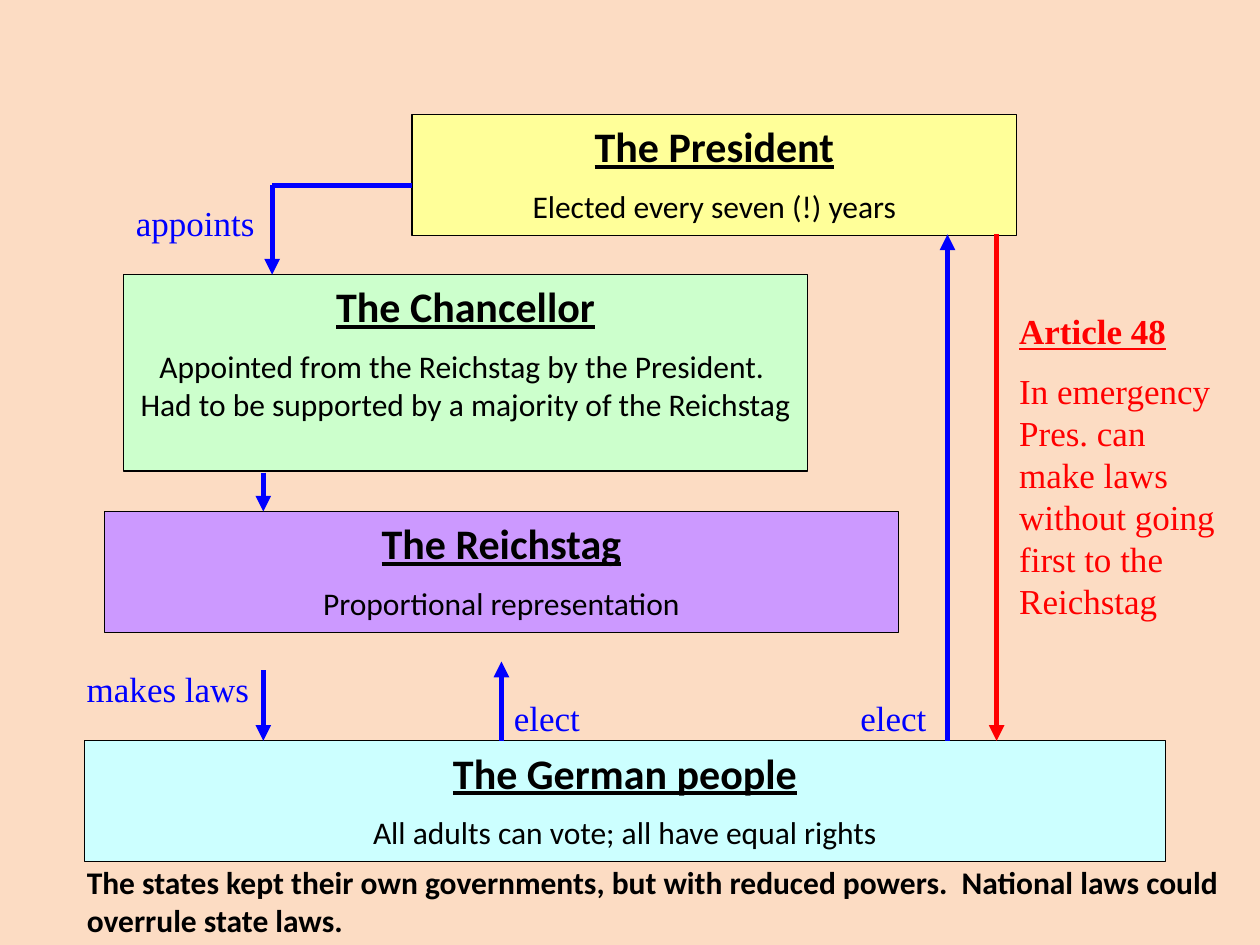
from lxml import etree
from pptx import Presentation
from pptx.dml.color import RGBColor
from pptx.enum.shapes import MSO_CONNECTOR, MSO_SHAPE
from pptx.enum.text import MSO_ANCHOR, PP_ALIGN
from pptx.oxml.ns import qn
from pptx.util import Inches, Pt

BLACK, BLUE, RED = "000000", "0000FF", "FF0000"
SANS, SERIF = "Calibri", "Times New Roman"


def color(hex_string):
    return RGBColor.from_string(hex_string)


def write(shape, lines, align=PP_ALIGN.LEFT):
    """Fill a shape with lines of (text, font name, size, colour, bold, underline)."""
    frame = shape.text_frame
    frame.word_wrap = True
    frame.vertical_anchor = MSO_ANCHOR.TOP
    for index, (text, name, size, font_color, bold, underline) in enumerate(lines):
        paragraph = frame.add_paragraph() if index else frame.paragraphs[0]
        paragraph.text = text
        paragraph.alignment = align
        paragraph.space_before = Pt(size / 2 if index else 0)
        font = paragraph.font
        font.name, font.size = name, Pt(size)
        font.bold, font.underline = bold, underline
        font.color.rgb = color(font_color)


def add_institution(slide, box, fill, title, detail):
    shape = slide.shapes.add_shape(MSO_SHAPE.RECTANGLE, *map(Inches, box))
    shape.shadow.inherit = False
    shape.fill.solid()
    shape.fill.fore_color.rgb = color(fill)
    shape.line.color.rgb = color(BLACK)
    shape.line.width = Pt(0.75)
    write(shape, [(title, SANS, 24, BLACK, True, True),
                  (detail, SANS, 18, BLACK, False, False)], PP_ALIGN.CENTER)


def add_text(slide, box, lines):
    write(slide.shapes.add_textbox(*map(Inches, box)), lines)


def add_link(slide, start, end, line_color=BLUE, arrow=True):
    link = slide.shapes.add_connector(MSO_CONNECTOR.STRAIGHT, *map(Inches, start + end))
    link.line.color.rgb = color(line_color)
    link.line.width = Pt(3)
    if arrow:
        etree.SubElement(link.line._get_or_add_ln(), qn("a:tailEnd"), type="triangle")
    etree.SubElement(link._element.spPr, qn("a:effectLst"))


def add_institutions(slide):
    institutions = [
        ((0.67, 5.88, 8.58, 0.96), "CCFFFF", "The German people",
         "All adults can vote; all have equal rights"),
        ((0.83, 4.06, 6.3, 0.96), "CC99FF", "The Reichstag",
         "Proportional representation"),
        ((0.98, 2.18, 5.43, 1.56), "CCFFCC", "The Chancellor",
         "Appointed from the Reichstag by the President.  "
         "Had to be supported by a majority of the Reichstag"),
        ((3.27, 0.91, 4.8, 0.96), "FFFF99", "The President",
         "Elected every seven (!) years"),
    ]
    for institution in institutions:
        add_institution(slide, *institution)


def add_links(slide):
    president_bottom, people_top = 1.86, 5.88
    add_link(slide, (3.27, 1.47), (2.16, 1.47), arrow=False)
    arrows = [
        (2.16, 1.47, 2.18, BLUE),
        (2.09, 3.75, 4.06, BLUE),
        (2.09, 5.32, people_top, BLUE),
        (3.98, people_top, 5.25, BLUE),
        (7.52, people_top, president_bottom, BLUE),
        (7.91, president_bottom, people_top, RED),
    ]
    for x, start, end, line_color in arrows:
        add_link(slide, (x, start), (x, end), line_color)


def add_labels(slide):
    labels = [
        ("appoints", 0.98, 1.55, 1.5),
        ("makes laws", 0.59, 5.25, 1.57),
        ("elect", 3.98, 5.48, 1.02),
        ("elect", 6.73, 5.48, 1.02),
    ]
    for text, left, top, width in labels:
        add_text(slide, (left, top, width, 0.43),
                 [(text, SERIF, 20, BLUE, False, False)])


def add_notes_on_powers(slide):
    add_text(slide, (7.99, 2.41, 1.81, 2.63), [
        ("Article 48", SERIF, 20, RED, True, True),
        ("In emergency Pres. can make laws without going first to the Reichstag",
         SERIF, 20, RED, False, False),
    ])
    add_text(slide, (0.59, 6.8, 9.41, 0.7), [
        ("The states kept their own governments, but with reduced powers.  "
         "National laws could overrule state laws.", SANS, 18, BLACK, True, False),
    ])


def main():
    presentation = Presentation()
    presentation.slide_width, presentation.slide_height = Inches(10), Inches(7.5)
    slide = presentation.slides.add_slide(presentation.slide_layouts[6])
    slide.background.fill.solid()
    slide.background.fill.fore_color.rgb = color("FCDCC3")
    add_institutions(slide)
    add_links(slide)
    add_labels(slide)
    add_notes_on_powers(slide)
    presentation.save("out.pptx")


if __name__ == "__main__":
    main()
